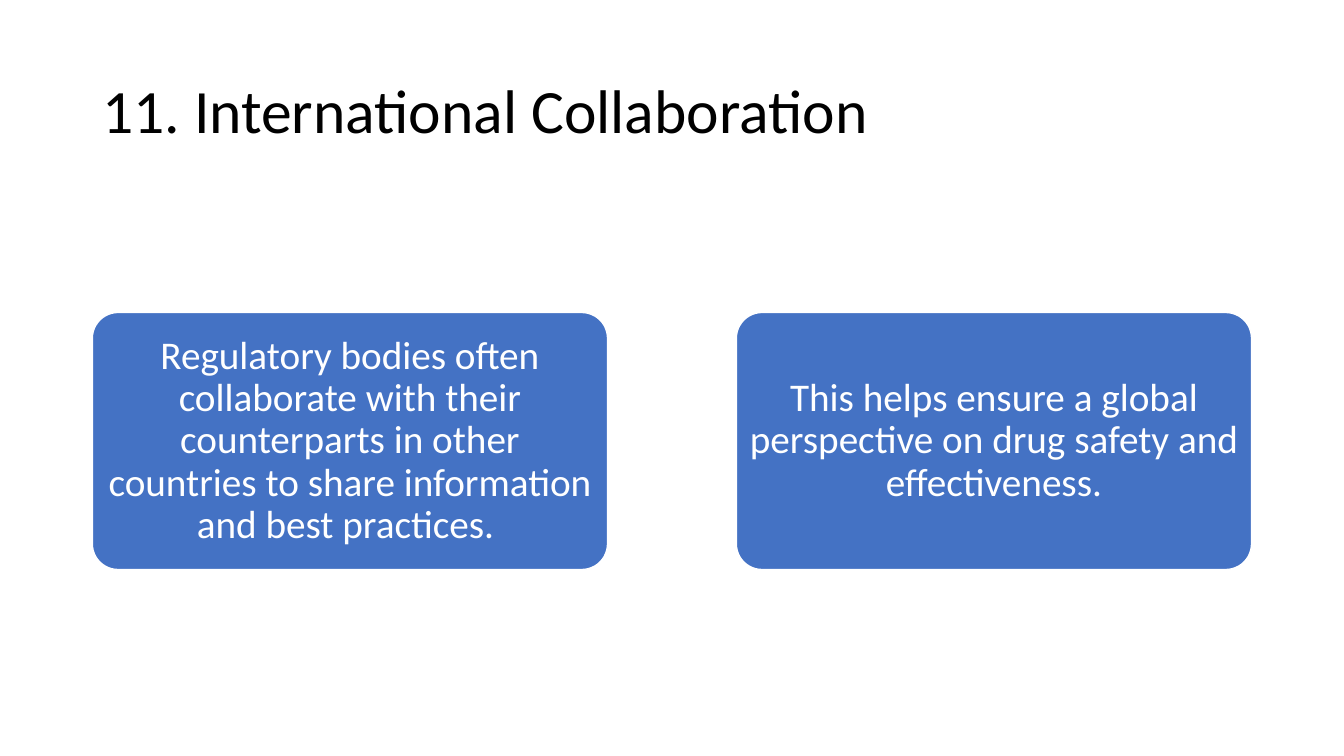
import pptx
import pptx.dml.color
import pptx.enum.shapes
import pptx.enum.text
import pptx.util

Pt = pptx.util.Pt
FONT = "Calibri"
MARGIN = 66
CONTENT_WIDTH = 828
CARD_WIDTH = 368
CARD_TEXTS = [
    "Regulatory bodies often collaborate with their counterparts in other "
    "countries to share information and best practices. ",
    "This helps ensure a global perspective on drug safety and effectiveness.",
]


def color(hex_string):
    return pptx.dml.color.RGBColor.from_string(hex_string)


def write_text(shape, text, size, hex_string, alignment, inset_x, inset_y):
    text_frame = shape.text_frame
    text_frame.word_wrap = True
    text_frame.vertical_anchor = pptx.enum.text.MSO_ANCHOR.MIDDLE
    text_frame.margin_left = text_frame.margin_right = Pt(inset_x)
    text_frame.margin_top = text_frame.margin_bottom = Pt(inset_y)
    text_frame.text = text
    paragraph = text_frame.paragraphs[0]
    paragraph.alignment = alignment
    paragraph.line_spacing = 0.9
    font = paragraph.runs[0].font
    font.name = FONT
    font.size = Pt(size)
    font.color.rgb = color(hex_string)


def add_title(slide, text, left, top, width, height):
    title = slide.shapes.add_textbox(Pt(left), Pt(top), Pt(width), Pt(height))
    write_text(title, text, 44, "000000", pptx.enum.text.PP_ALIGN.LEFT, 7.2, 3.6)


def add_card(slide, text, left, top, width, height):
    card = slide.shapes.add_shape(
        pptx.enum.shapes.MSO_SHAPE.ROUNDED_RECTANGLE,
        Pt(left), Pt(top), Pt(width), Pt(height))
    card.adjustments[0] = 0.1
    card.shadow.inherit = False
    card.fill.solid()
    card.fill.fore_color.rgb = color("4472C4")
    card.line.color.rgb = color("FFFFFF")
    card.line.width = Pt(1)
    write_text(card, text, 28, "FFFFFF", pptx.enum.text.PP_ALIGN.CENTER, 4, 3)


def add_card_row(slide, texts, left, top, width, height):
    """Spread equal cards from the left to the right edge of the box."""
    step = (width - CARD_WIDTH) / (len(texts) - 1)
    for index, text in enumerate(texts):
        add_card(slide, text, left + index * step, top, CARD_WIDTH, height)


def main():
    presentation = pptx.Presentation()
    presentation.slide_width = Pt(960)
    presentation.slide_height = Pt(540)
    slide = presentation.slides.add_slide(presentation.slide_layouts[6])
    add_title(slide, "11. International Collaboration",
              MARGIN, 28.8, CONTENT_WIDTH, 104.4)
    add_card_row(slide, CARD_TEXTS, MARGIN, 223.2, CONTENT_WIDTH, 183.6)
    presentation.save("out.pptx")


if __name__ == "__main__":
    main()
